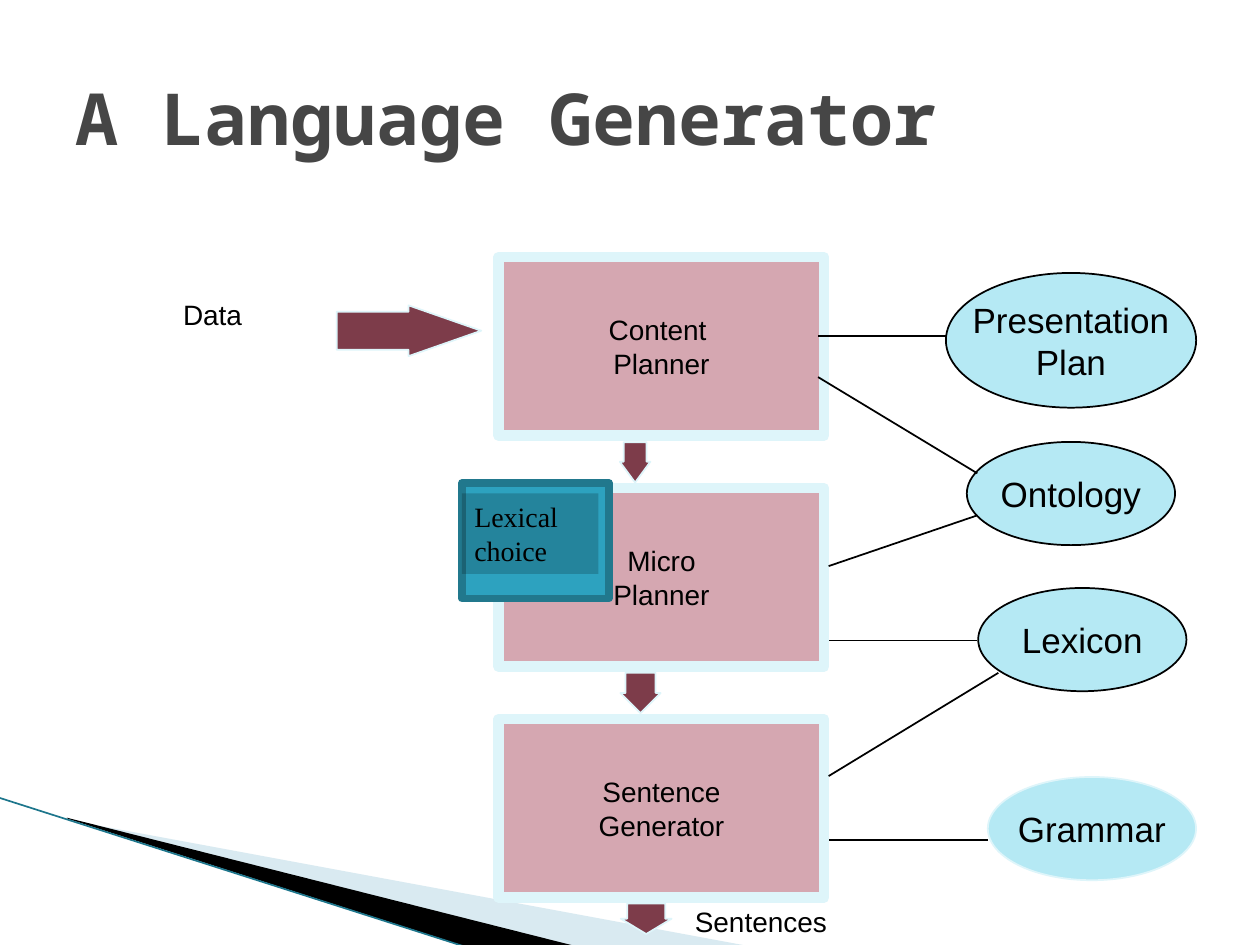
from lxml import etree
from pptx import Presentation
from pptx import util as u
from pptx.dml import color
from pptx.enum import shapes, text
from pptx.oxml import ns

Pt = u.Pt
KIND = shapes.MSO_SHAPE
LEFT, MID = text.PP_ALIGN.LEFT, text.PP_ALIGN.CENTER
INK, PALE, ROSE, WINE = "000000", "DEF5FA", "D5A7B1", "7D3C4A"
SKY, TEAL, DEEP = "B5E9F4", "2DA2BF", "21788D"


def rgb(code):
    return color.RGBColor.from_string(code)


class Slide:
    font = "Arial"

    def __init__(self, page):
        self.page = page
        self.items = page.shapes

    def words(self, frame, lines, size, align=MID, font=None, ink=INK, bold=False):
        for i, line in enumerate(lines):
            para = frame.paragraphs[0] if i == 0 else frame.add_paragraph()
            para.alignment = align
            run = para.add_run()
            run.text = line
            run.font.size, run.font.bold = Pt(size), bold
            run.font.name = font or self.font
            run.font.color.rgb = rgb(ink)

    def title(self, line, x, y, w, h):
        box = self.items.title
        box.left, box.top, box.width, box.height = map(Pt, (x, y, w, h))
        box.text_frame.vertical_anchor = text.MSO_ANCHOR.MIDDLE
        self.words(box.text_frame, [line], 41, LEFT, "Noto Sans Mono", "464646", True)

    def paint(self, item, fill, line=None, width=1, alpha=None):
        item.shadow.inherit = False
        item.fill.solid()
        item.fill.fore_color.rgb = rgb(fill)
        if alpha:
            tone = item._element.spPr.find(ns.qn("a:solidFill"))[0]
            etree.SubElement(tone, ns.qn("a:alpha"), val=str(alpha * 1000))
        if line:
            item.line.color.rgb = rgb(line)
            item.line.width = Pt(width)
        else:
            item.line.fill.background()

    def shape(self, kind, x, y, w, h, fill, line=None, width=1, alpha=None):
        item = self.items.add_shape(kind, *map(Pt, (x, y, w, h)))
        self.paint(item, fill, line, width, alpha)
        return item

    def node(self, kind, spot, lines, size, fill, line, width=1):
        item = self.shape(kind, *spot, fill, line, width)
        item.text_frame.word_wrap = False
        item.text_frame.vertical_anchor = text.MSO_ANCHOR.MIDDLE
        self.words(item.text_frame, lines, size)

    def arrow(self, spot, head, turn=0):
        item = self.shape(KIND.RIGHT_ARROW, *spot, WINE, PALE)
        item.adjustments[0], item.adjustments[1] = 0.75, head
        item.rotation = turn

    def label(self, line, x, y, w, h, align, wrap):
        frame = self.items.add_textbox(*map(Pt, (x, y, w, h))).text_frame
        frame.word_wrap = wrap
        frame.auto_size = text.MSO_AUTO_SIZE.SHAPE_TO_FIT_TEXT
        self.words(frame, [line], 16, align)

    def link(self, x1, y1, x2, y2, ink=INK, width=1):
        line = self.items.add_connector(
            shapes.MSO_CONNECTOR.STRAIGHT, *map(Pt, (x1, y1, x2, y2)))
        line.line.color.rgb = rgb(ink)
        line.line.width = Pt(width)
        etree.SubElement(line._element.spPr, ns.qn("a:effectLst"))

    def wedge(self, points, fill, alpha=None):
        dots = [(Pt(x), Pt(y)) for x, y in points]
        form = self.items.build_freeform(*dots[0])
        form.add_line_segments(dots[1:], close=True)
        self.paint(form.convert_to_shape(), fill, alpha=alpha)


def main():
    deck = Presentation()
    deck.slide_width, deck.slide_height = Pt(720), Pt(540)
    art = Slide(deck.slides.add_slide(deck.slide_layouts[5]))

    # Corner sweep
    art.wedge([(39.6, 468.7), (428.4, 540.7), (328.3, 540.7), (39.6, 468)], "A0CBDC", 40)
    art.wedge([(38.2, 467.3), (329, 540.7), (267.8, 541.4), (38.9, 468)], INK)
    art.link(-0.7, 455.8, 267.1, 541.4, "1D768C", 0.95)

    art.title("A Language Generator", 36, 21.6, 648, 90)

    # Pipeline stages, one every 132 points
    stages = [("Content ", "Planner"), ("Micro", "Planner"), ("Sentence", "Generator")]
    for i, lines in enumerate(stages):
        spot = (285, 147 + 132 * i, 186, 102)
        art.node(KIND.RECTANGLE, spot, lines, 16, ROSE, PALE, 6)

    # Arrows down between stages
    for spot, head in [((351.4, 255.5, 23, 17.5), 0.68),
                       ((354.5, 384.5, 23, 23), 0.5),
                       ((360.5, 510.5, 17.5, 29), 0.5)]:
        art.arrow(spot, head, 90)

    # Knowledge sources
    for spot, lines, edge in [((559, 336, 119, 59), ["Lexicon"], INK),
                              ((564.5, 444, 119, 59), ["Grammar"], PALE),
                              ((540.5, 156, 143, 77), ["Presentation", "Plan"], INK),
                              ((552.5, 252.5, 119, 59), ["Ontology"], INK)]:
        art.node(KIND.OVAL, spot, lines, 20, SKY, edge)

    # Links from sources to stages
    for ends in [(541, 192, 467.5, 192), (558.5, 270.5, 467.5, 215.5),
                 (558.5, 294.5, 473.5, 323.5), (558.5, 366, 473.5, 366),
                 (570.5, 384.5, 473.5, 443.5), (564.5, 480, 473.5, 480)]:
        art.link(*ends)

    # Input and output
    art.arrow((192.5, 174.5, 82.5, 29), 1.43)
    art.label("Data", 88.5, 166.5, 66, 36.5, MID, False)
    art.label("Sentences", 390, 513.5, 129, 26.5, LEFT, True)

    # Lexical choice callout
    card = art.shape(KIND.RECTANGLE, 264, 276, 84, 66, TEAL, DEEP, 4.33)
    etree.SubElement(card._element.spPr.find(ns.qn("a:ln")), ns.qn("a:round"))
    note = art.shape(KIND.RECTANGLE, 264, 282, 78, 46, INK, alpha=18)
    note.text_frame.word_wrap = True
    note.text_frame.vertical_anchor = text.MSO_ANCHOR.TOP
    note.text_frame.auto_size = text.MSO_AUTO_SIZE.SHAPE_TO_FIT_TEXT
    art.words(note.text_frame, ["Lexical", "choice"], 16, LEFT, "Times New Roman")

    deck.save("out.pptx")


if __name__ == "__main__":
    main()
